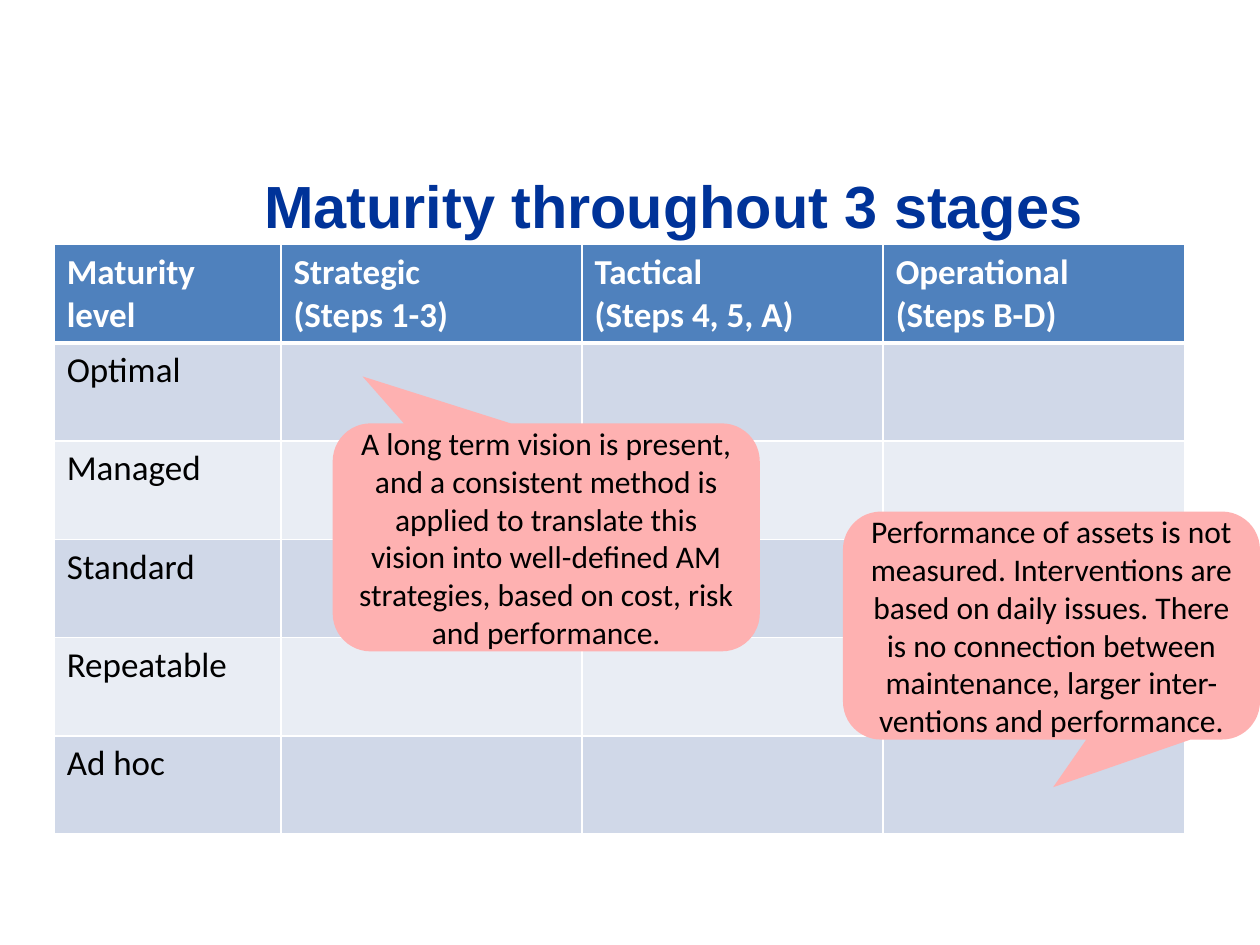
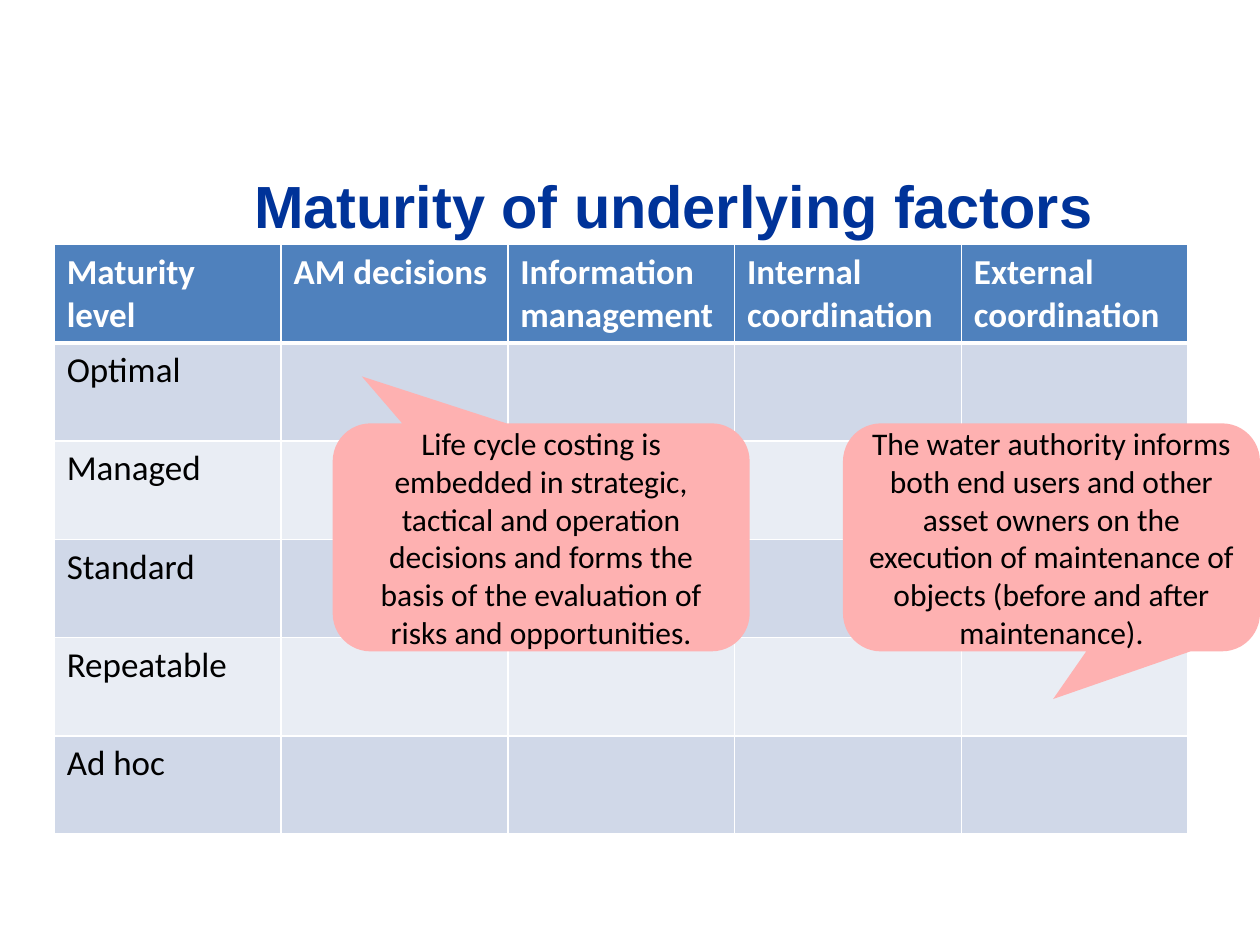
from lxml.etree import SubElement
from pptx import Presentation
from pptx.dml.color import RGBColor as Rgb
from pptx.enum.shapes import MSO_SHAPE as Shape
from pptx.enum.text import MSO_ANCHOR as Anchor, MSO_AUTO_SIZE as AutoSize, PP_ALIGN as Align
from pptx.oxml.ns import qn
from pptx.util import Inches, Pt

COLORS = {
    "title": "003399",
    "header": "4F81BD",
    "odd_row": "D0D8E8",
    "even_row": "E9EDF4",
    "callout": "FEB1B1",
    "text": "000000",
    "white": "FFFFFF",
}
LEVELS = ["Optimal", "Managed", "Standard", "Repeatable", "Ad hoc"]
ROW_HEIGHT = 0.78
UP_LEFT = (-0.43, -0.706)
DOWN = (0.004, 0.709)


def color(key):
    """Return the named palette colour."""
    return Rgb.from_string(COLORS[key])


def format_text(frame, size, color_key, font_name="Calibri", bold=False, align=Align.LEFT):
    """Format every run in a text frame alike."""
    for paragraph in frame.paragraphs:
        paragraph.alignment = align
        for run in paragraph.runs:
            run.font.name = font_name
            run.font.size = Pt(size)
            run.font.bold = bold
            run.font.color.rgb = color(color_key)


def add_title(slide, wording):
    """Place the slide heading in the title placeholder."""
    title = slide.shapes.title
    title.left, title.top = Inches(1.13), Inches(1.24)
    title.width, title.height = Inches(8.53), Inches(0.52)
    frame = title.text_frame
    frame.text = wording
    frame.word_wrap = True
    frame.auto_size = AutoSize.NONE
    frame.vertical_anchor = Anchor.TOP
    frame.margin_left, frame.margin_right = 0, Inches(0.1)
    frame.margin_top, frame.margin_bottom = Inches(0.1), 0
    format_text(frame, 34, "title", "Arial", True, Align.CENTER)


def add_borders(cell, top, bottom):
    """Draw white cell borders with the given top and bottom widths."""
    properties = cell._tc.get_or_add_tcPr()
    for side, points in (("L", 1), ("R", 1), ("T", top), ("B", bottom)):
        border = SubElement(properties, qn(f"a:ln{side}"), w=str(Pt(points)))
        fill = SubElement(border, qn("a:solidFill"))
        SubElement(fill, qn("a:srgbClr"), val=COLORS["white"])


def add_maturity_table(slide, headings, widths):
    """Add the grid of maturity levels against the given headings."""
    rows = [["Maturity level", *headings]]
    rows += [[level] + [""] * len(headings) for level in LEVELS]
    table = slide.shapes.add_table(
        len(rows), len(widths), Inches(0.43), Inches(1.94),
        Inches(sum(widths)), Inches(ROW_HEIGHT * len(rows))).table
    for column, width in zip(table.columns, widths):
        column.width = Inches(width)
    for row_number, wordings in enumerate(rows):
        is_header = row_number == 0
        band = "header" if is_header else "odd_row" if row_number % 2 else "even_row"
        table.rows[row_number].height = Inches(ROW_HEIGHT)
        for column_number, wording in enumerate(wordings):
            cell = table.cell(row_number, column_number)
            add_borders(cell, 3 if row_number == 1 else 1, 3 if is_header else 1)
            cell.fill.solid()
            cell.fill.fore_color.rgb = color(band)
            cell.text_frame.text = wording
            format_text(cell.text_frame, 20, "white" if is_header else "text", bold=is_header)


def add_callout(slide, wording, left, top, pointer, width=3.31):
    """Add a rounded speech callout whose tip is set by pointer."""
    callout = slide.shapes.add_shape(
        Shape.ROUNDED_RECTANGULAR_CALLOUT,
        Inches(left), Inches(top), Inches(width), Inches(1.81))
    callout.adjustments[0], callout.adjustments[1] = pointer
    callout.shadow.inherit = False
    callout.fill.solid()
    callout.fill.fore_color.rgb = color("callout")
    callout.line.fill.background()
    frame = callout.text_frame
    frame.text = wording
    frame.word_wrap = True
    frame.vertical_anchor = Anchor.MIDDLE
    format_text(frame, 18, "text", align=Align.CENTER)


def add_maturity_slide(deck, title, headings, widths):
    """Add a slide with a title and a maturity table."""
    slide = deck.slides.add_slide(deck.slide_layouts[5])
    add_title(slide, title)
    add_maturity_table(slide, headings, widths)
    return slide


def main():
    """Build and save the two maturity slides."""
    deck = Presentation()
    deck.slide_width, deck.slide_height = Inches(10), Inches(7.5)

    stages = add_maturity_slide(
        deck, "Maturity throughout 3 stages",
        ["Strategic\n(Steps 1-3)", "Tactical\n(Steps 4, 5, A)", "Operational\n(Steps B-D)"],
        [1.8] + [2.39] * 3)
    add_callout(
        stages,
        "A long term vision is present, and a consistent method is applied to translate "
        "this vision into well-defined AM strategies, based on cost, risk and performance.",
        2.64, 3.36, UP_LEFT, width=3.39)
    add_callout(
        stages,
        "Performance of assets is not measured. Interventions are based on daily issues. "
        "There is no connection between maintenance, larger inter-ventions and performance.",
        6.69, 4.06, DOWN)

    factors = add_maturity_slide(
        deck, "Maturity of underlying factors",
        ["AM decisions", "Information management",
         "Internal coordination", "External coordination"],
        [1.8] * 5)
    add_callout(
        factors,
        "Life cycle costing is embedded in strategic, tactical and operation decisions "
        "and forms the basis of the evaluation of risks and opportunities.",
        2.64, 3.36, UP_LEFT)
    add_callout(
        factors,
        "The water authority informs both end users and other asset owners on the "
        "execution of maintenance of objects (before and after maintenance).",
        6.69, 3.36, DOWN)

    deck.save("out.pptx")


if __name__ == "__main__":
    main()
